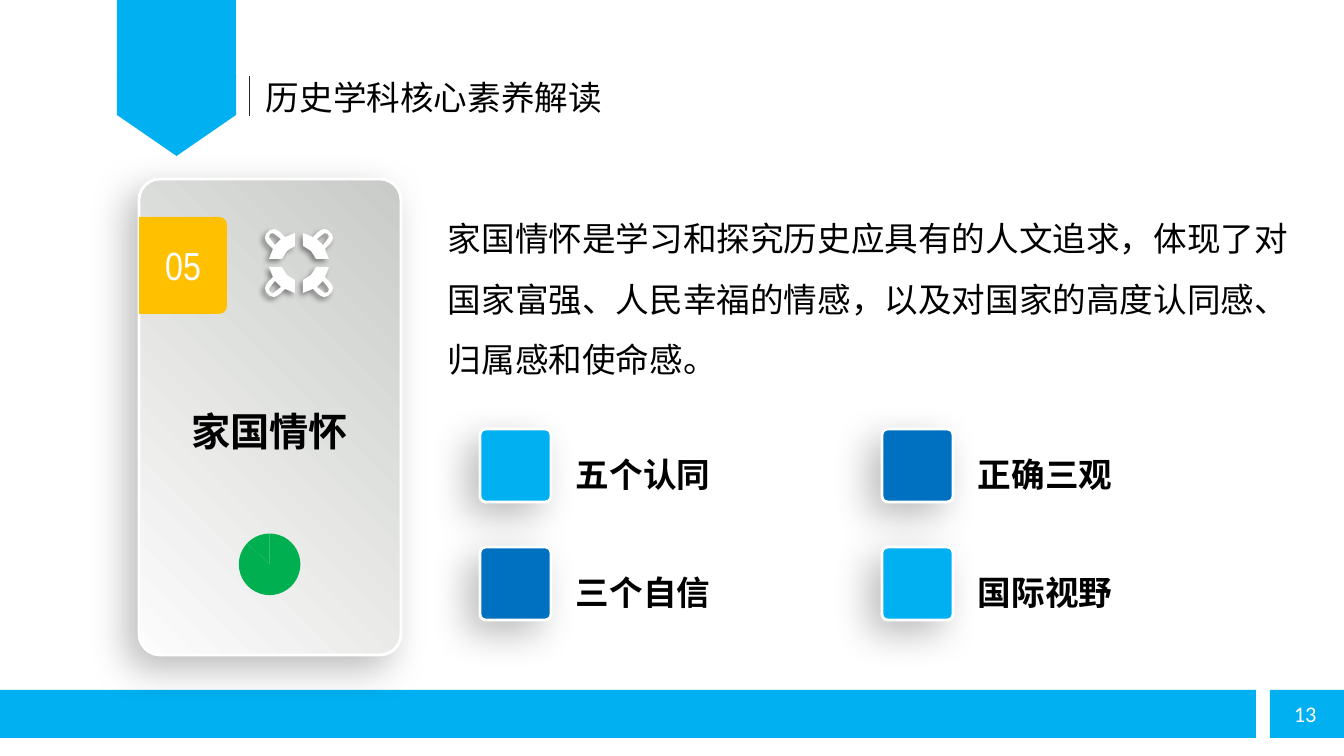
from lxml import etree
from pptx import Presentation
from pptx import util as u
from pptx.chart.data import CategoryChartData
from pptx.dml.color import RGBColor
from pptx.enum import chart, shapes, text
from pptx.oxml import parse_xml
from pptx.oxml.ns import nsdecls, qn

SKY, BLUE, GREEN, AMBER = "00B0F0", "0070C0", "00B050", "FFC000"
WHITE, BLACK, CHARCOAL = "FFFFFF", "000000", "262626"
CJK = "Noto Sans CJK SC"
SOFT = (26, 27, 12)
TIGHT = (40, 4, 3)
KIND = shapes.MSO_SHAPE


def px(length):
    return u.Emu(round(length * 914400 / 100.8))


def rgb(value):
    return RGBColor.from_string(value)


class SlideBuilder:
    """Draws styled elements on one slide, with lengths in px."""

    def __init__(self, presentation):
        self.slide = presentation.slides.add_slide(presentation.slide_layouts[6])
        self.shapes = self.slide.shapes

    def style(self, shape, fill, outline=None, shadow=None):
        if isinstance(fill, tuple):
            shape.fill.gradient()
            shape.fill.gradient_angle = 225
            for stop, value in zip(shape.fill.gradient_stops, fill):
                stop.color.rgb = rgb(value)
        else:
            shape.fill.solid()
            shape.fill.fore_color.rgb = rgb(fill)
        if outline:
            shape.line.color.rgb = rgb(outline)
            shape.line.width = u.Pt(2)
        else:
            shape.line.fill.background()
        shape.shadow.inherit = False
        if shadow:
            alpha, blur, distance = shadow
            effects = shape._element.spPr.find(qn("a:effectLst"))
            effects.append(parse_xml(
                f'<a:outerShdw {nsdecls("a")} blurRad="{u.Pt(blur)}" dist="{u.Pt(distance)}" '
                f'dir="8100000" algn="tr" rotWithShape="0"><a:srgbClr val="{BLACK}">'
                f'<a:alpha val="{alpha * 1000}"/></a:srgbClr></a:outerShdw>'))

    def box(self, kind, left, top, width, height, fill, adjust=(), **style):
        shape = self.shapes.add_shape(kind, px(left), px(top), px(width), px(height))
        for index, value in enumerate(adjust):
            shape.adjustments[index] = value
        self.style(shape, fill, **style)
        return shape

    def turned_box(self, kind, left, top, width, height, fill, adjust=()):
        shift = (width - height) / 2
        shape = self.box(kind, left + shift, top - shift, height, width, fill, adjust)
        shape.rotation = 90

    def line(self, x1, y1, x2, y2, color, width):
        connector = self.shapes.add_connector(
            shapes.MSO_CONNECTOR.STRAIGHT, px(x1), px(y1), px(x2), px(y2))
        connector.line.color.rgb = rgb(color)
        connector.line.width = u.Pt(width)
        etree.SubElement(connector._element.spPr, qn("a:effectLst"))

    def outline(self, contours, fill, **style):
        first, *others = contours
        builder = self.shapes.build_freeform(*first[0], scale=px(1))
        builder.add_line_segments(first[1:])
        for contour in others:
            builder.move_to(*contour[0])
            builder.add_line_segments(contour[1:])
        self.style(builder.convert_to_shape(), fill, **style)

    def text(self, left, top, width, height, words, size, color=BLACK, font=CJK,
             bold=False, spacing=1.0, align=text.PP_ALIGN.LEFT, wrap=True):
        shape = self.shapes.add_textbox(px(left), px(top), px(width), px(height))
        shape.text_frame.word_wrap = wrap
        paragraph = shape.text_frame.paragraphs[0]
        paragraph.text = words
        paragraph.alignment = align
        paragraph.line_spacing = spacing
        paragraph.font.size = u.Pt(size)
        paragraph.font.bold = bold
        paragraph.font.color.rgb = rgb(color)
        paragraph.font.name = font
        properties = paragraph._p.pPr.find(qn("a:defRPr"))
        etree.SubElement(properties, qn("a:ea"), typeface=font)

    def pie(self, left, top, width, height, values, color):
        data = CategoryChartData()
        data.categories = [str(number) for number in range(1, len(values) + 1)]
        data.add_series("Series 1", values)
        pie = self.shapes.add_chart(chart.XL_CHART_TYPE.PIE, px(left), px(top),
                                    px(width), px(height), data).chart
        pie.has_legend = False
        pie.has_title = False
        pie.font.size = u.Pt(18)
        pie.font.name = "Calibri"
        pie.font.color.rgb = rgb(BLACK)
        plot = pie.plots[0]
        plot.vary_by_categories = False
        for index in range(len(values)):
            point = plot.series[0].points[index].format
            point.fill.solid()
            point.fill.fore_color.rgb = rgb(color)
            point.line.fill.background()
        area = pie._chartSpace.chart.plotArea
        for layout in area.findall(qn("c:layout")):
            area.remove(layout)
        area.insert(0, parse_xml(
            f'<c:layout {nsdecls("c")}><c:manualLayout><c:layoutTarget val="inner"/>'
            '<c:xMode val="edge"/><c:yMode val="edge"/><c:x val="0.26"/><c:y val="0.16"/>'
            '<c:w val="0.46"/><c:h val="0.7"/></c:manualLayout></c:layout>'))


def lifebuoy_contours(center_x, center_y):
    quarter = [(17, 4), (30, 4), (28, 9), (26, 14), (31, 19), (33, 22), (34, 25),
               (33, 29), (31, 31), (29, 33), (25, 34), (22, 33), (19, 31), (14, 26),
               (9, 28), (4, 30), (4, 17), (9, 14), (12, 12), (14, 9), (17, 4)]
    hole = [(24, 18), (21, 21), (18, 24), (23, 28), (26, 30), (29, 29), (30, 26),
            (28, 23), (24, 18)]
    return [[(center_x + flip_x * x, center_y + flip_y * y) for x, y in contour]
            for flip_x in (1, -1) for flip_y in (1, -1) for contour in (quarter, hole)]


def main():
    presentation = Presentation()
    presentation.slide_width, presentation.slide_height = px(1344), px(756)
    slide = SlideBuilder(presentation)
    center = text.PP_ALIGN.CENTER

    slide.turned_box(KIND.PENTAGON, 117, 74, 119, 82, SKY)
    slide.box(KIND.RECTANGLE, 117, 0, 119, 74, SKY)
    slide.line(250, 76, 250, 116, CHARCOAL, 0.75)
    slide.text(256, 72, 379, 50, "历史学科核心素养解读", 24)

    slide.box(KIND.RECTANGLE, 0, 690, 1256, 48, SKY)
    slide.box(KIND.RECTANGLE, 1270, 690, 74, 48, SKY)
    slide.text(1284, 695, 46, 37, "13", 16, WHITE, "Calibri", wrap=False)

    slide.box(KIND.ROUNDED_RECTANGLE, 139, 179, 262, 476, ("C9CBC8", "FCFCFC"),
              (0.08,), outline=WHITE, shadow=SOFT)
    slide.turned_box(KIND.ROUND_2_SAME_RECTANGLE, 139, 217, 88, 97, AMBER, (0.09, 0))
    slide.text(150, 236, 66, 57, "05", 28, WHITE, "Arial Narrow", align=center)
    slide.text(141, 402, 257, 57, "家国情怀", 28, bold=True, align=center)
    slide.pie(204, 519, 134, 89, (87, 13), GREEN)
    slide.outline(lifebuoy_contours(299, 263), WHITE, shadow=TIGHT)

    slide.text(438, 193, 861, 194,
               "家国情怀是学习和探究历史应具有的人文追求，体现了对国家富强、人民幸福的情感，"
               "以及对国家的高度认同感、归属感和使命感。", 24, spacing=1.5)

    goals = [("五个认同", SKY), ("正确三观", BLUE), ("三个自信", BLUE), ("国际视野", SKY)]
    for index, (goal, color) in enumerate(goals):
        row, column = divmod(index, 2)
        left, top = 480 + 402 * column, 429 + 118 * row
        slide.box(KIND.ROUNDED_RECTANGLE, left, top, 71, 73, color, (0.08,),
                  outline=WHITE, shadow=SOFT)
        slide.text(left + 86, top, 202, 68, goal, 24, bold=True, spacing=1.5)

    presentation.save("out.pptx")


if __name__ == "__main__":
    main()
